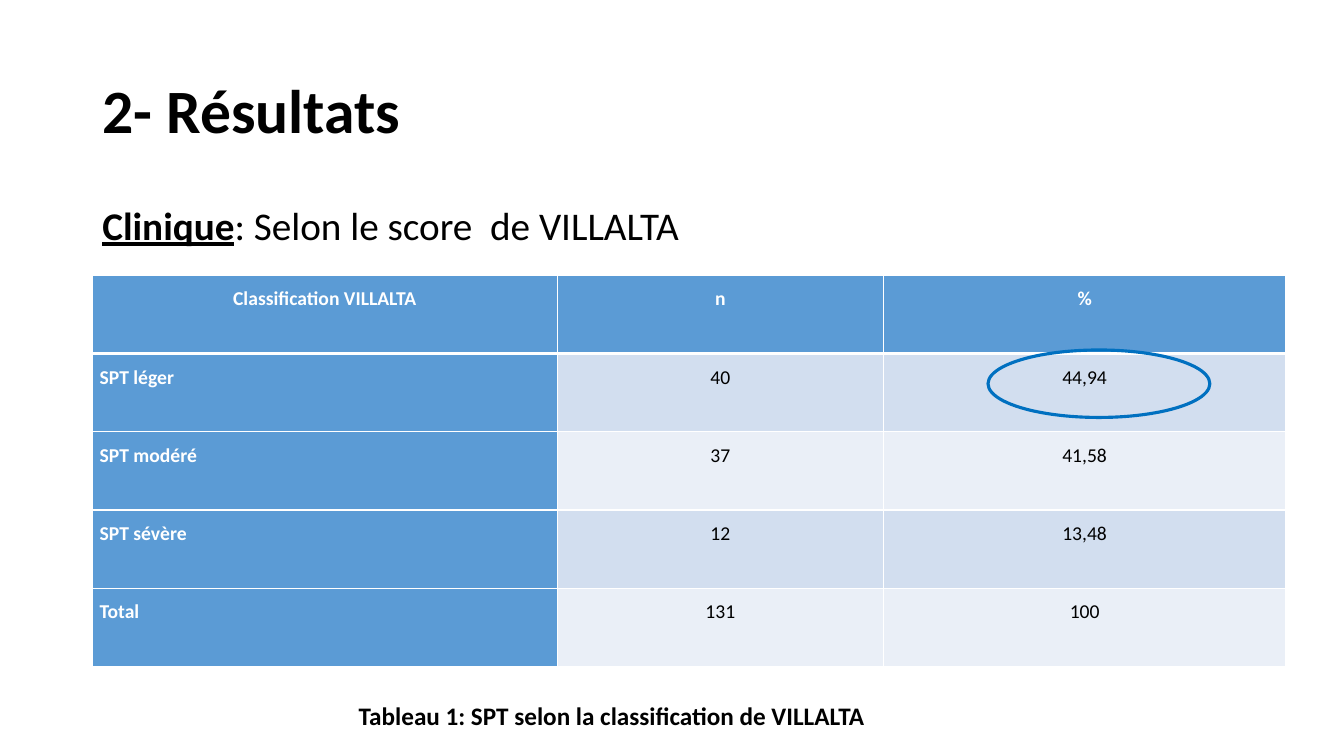
from dataclasses import dataclass

from lxml.etree import SubElement
from pptx import Presentation
from pptx.dml.color import RGBColor as RGB
from pptx.enum.shapes import MSO_SHAPE as Shape
from pptx.enum.text import MSO_ANCHOR as Anchor, MSO_AUTO_SIZE as AutoSize, PP_ALIGN as Align
from pptx.oxml.ns import qn
from pptx.util import Cm, Pt


@dataclass(frozen=True)
class Theme:
    font: str = "Calibri"
    black: str = "000000"
    white: str = "FFFFFF"
    header: str = "5B9BD5"
    bands: tuple[str, str] = ("D2DEEF", "EAEFF7")
    accent: str = "0070C0"
    title: int = 44
    body: int = 28
    caption: int = 18
    cell: int = 14


@dataclass(frozen=True)
class Box:
    left: float
    top: float
    width: float
    height: float

    def cm(self) -> tuple:
        return Cm(self.left), Cm(self.top), Cm(self.width), Cm(self.height)


@dataclass(frozen=True)
class Row:
    label: str
    n: str
    percent: str

    def texts(self) -> tuple[str, str, str]:
        return self.label, self.n, self.percent


THEME = Theme()
TITLE_BOX = Box(2.33, 1.01, 29.21, 3.68)
BODY_BOX = Box(2.33, 5.07, 29.21, 1.5)
TABLE_BOX = Box(2.33, 6.94, 30.07, 9.85)
CAPTION_BOX = Box(8.79, 17.53, 13.26, 1.02)
ELLIPSE_BOX = Box(24.9, 8.82, 5.59, 1.7)
COL_WIDTHS = (11.71, 8.23, 10.13)
ROWS = (
    Row("Classification VILLALTA", "n", "%"),
    Row("SPT léger", "40", "44,94"),
    Row("SPT modéré", "37", "41,58"),
    Row("SPT sévère", "12", "13,48"),
    Row("Total", "131", "100"),
)


def add_text(p, text: str, *, size: int, color: str = THEME.black, bold: bool = False,
             underline: bool = False, align=Align.LEFT, spacing: float = 1.0) -> None:
    p.alignment = align
    p.line_spacing = spacing
    r = p.add_run()
    r.text = text
    r.font.name = THEME.font
    r.font.size = Pt(size)
    r.font.bold = bold
    r.font.underline = underline
    r.font.color.rgb = RGB.from_string(color)


def add_box(s, box: Box, *, wrap: bool):
    tf = s.shapes.add_textbox(*box.cm()).text_frame
    tf.word_wrap = wrap
    return tf.paragraphs[0]


def set_borders(cell, color: str, top: float, bottom: float) -> None:
    tc_pr = cell._tc.get_or_add_tcPr()
    for side, width in (("L", 1), ("R", 1), ("T", top), ("B", bottom)):
        ln = SubElement(tc_pr, qn(f"a:ln{side}"), w=str(Pt(width)))
        fill = SubElement(ln, qn("a:solidFill"))
        SubElement(fill, qn("a:srgbClr"), val=color)


def add_score_table(s, box: Box, rows: tuple[Row, ...]) -> None:
    table = s.shapes.add_table(len(rows), len(COL_WIDTHS), *box.cm()).table
    for col, width in zip(table.columns, COL_WIDTHS):
        col.width = Cm(width)
    for i, row in enumerate(rows):
        table.rows[i].height = Cm(box.height / len(rows))
        for j, text in enumerate(row.texts()):
            cell = table.cell(i, j)
            is_head = i == 0 or j == 0
            set_borders(cell, THEME.white, 3 if i == 1 else 1, 3 if i == 0 else 1)
            cell.fill.solid()
            cell.fill.fore_color.rgb = RGB.from_string(
                THEME.header if is_head else THEME.bands[(i - 1) % 2])
            cell.margin_left = cell.margin_right = Cm(0.18)
            cell.margin_top = cell.margin_bottom = 0
            add_text(cell.text_frame.paragraphs[0], text, size=THEME.cell,
                     color=THEME.white if is_head else THEME.black, bold=is_head,
                     align=Align.LEFT if i and j == 0 else Align.CENTER, spacing=1.5)


def add_ellipse(s, box: Box) -> None:
    sp = s.shapes.add_shape(Shape.OVAL, *box.cm())
    sp.shadow.inherit = False
    sp.fill.background()
    sp.line.color.rgb = RGB.from_string(THEME.accent)
    sp.line.width = Pt(2.25)


def main() -> None:
    prs = Presentation()
    prs.slide_width, prs.slide_height = Cm(33.87), Cm(19.05)
    s = prs.slides.add_slide(prs.slide_layouts[5])

    # Title
    title = s.shapes.title
    title.left, title.top, title.width, title.height = TITLE_BOX.cm()
    tf = title.text_frame
    tf.auto_size = AutoSize.NONE
    tf.vertical_anchor = Anchor.MIDDLE
    add_text(tf.paragraphs[0], "2- Résultats", size=THEME.title, bold=True, spacing=0.9)

    # Lead line
    p = add_box(s, BODY_BOX, wrap=True)
    p.space_before = Pt(10)
    add_text(p, "Clinique", size=THEME.body, bold=True, underline=True, spacing=0.9)
    add_text(p, ": Selon le score  de VILLALTA", size=THEME.body, spacing=0.9)

    # Table with its caption
    add_score_table(s, TABLE_BOX, ROWS)
    add_text(add_box(s, CAPTION_BOX, wrap=False),
             "Tableau 1: SPT selon la classification de VILLALTA",
             size=THEME.caption, bold=True)

    # Ring around the highest share
    add_ellipse(s, ELLIPSE_BOX)

    prs.save("out.pptx")


if __name__ == "__main__":
    main()
